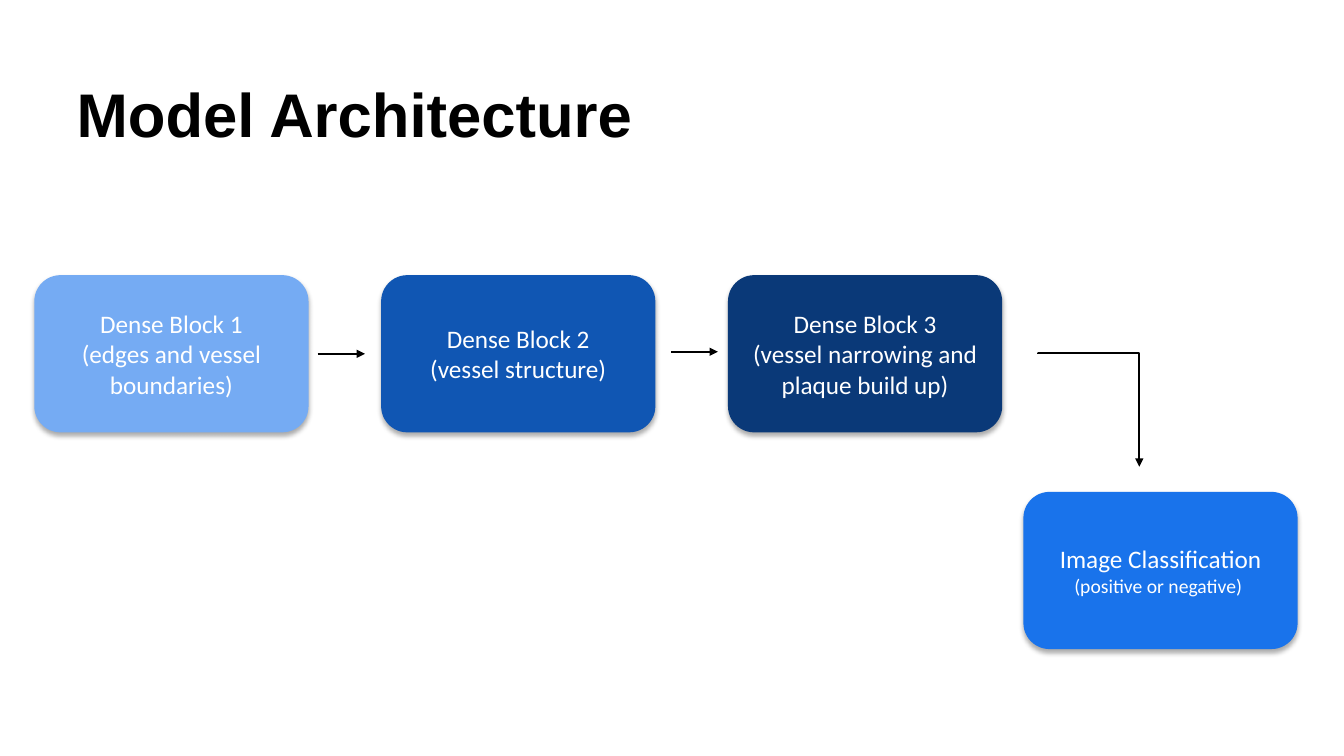
from lxml import etree
from pptx import Presentation
from pptx.dml.color import RGBColor
from pptx.enum.shapes import MSO_CONNECTOR, MSO_SHAPE
from pptx.enum.text import MSO_ANCHOR, PP_ALIGN
from pptx.oxml.ns import qn
from pptx.util import Emu, Pt

PX = 9144
ROUNDED = MSO_SHAPE.ROUNDED_RECTANGLE
STRAIGHT, ELBOW = MSO_CONNECTOR.STRAIGHT, MSO_CONNECTOR.ELBOW
TOP, MIDDLE = MSO_ANCHOR.TOP, MSO_ANCHOR.MIDDLE
LEFT, CENTER = PP_ALIGN.LEFT, PP_ALIGN.CENTER

COLORS = {
    "white": "FFFFFF",
    "black": "000000",
    "light": "75ABF3",
    "medium": "1056B3",
    "dark": "0A3978",
    "bright": "1973EB",
}
BLOCK_WIDTH, BLOCK_HEIGHT = 272, 156
BLOCK_LEFT, BLOCK_TOP, BLOCK_STEP = 34, 273, 344

DENSE_BLOCKS = [
    ("light", "Dense Block 1", "(edges and vessel boundaries)"),
    ("medium", "Dense Block 2", "(vessel structure)"),
    ("dark", "Dense Block 3", "(vessel narrowing and plaque build up)"),
]


def px(value):
    return Emu(value * PX)


def rgb(name):
    return RGBColor.from_string(COLORS[name])


class SlideBuilder:
    """Draws titles, blocks and arrows in one style on the current slide."""

    def __init__(self, slide):
        self.slide = slide

    def add_lines(self, frame, lines, font, color, align, bold=False):
        frame.word_wrap = True
        for index, (text, size) in enumerate(lines):
            paragraph = frame.add_paragraph() if index else frame.paragraphs[0]
            paragraph.alignment = align
            run = paragraph.add_run()
            run.text = text
            run.font.name = font
            run.font.size = Pt(size)
            run.font.bold = bold
            run.font.color.rgb = rgb(color)

    def title(self, text, left, top, width, height):
        shape = self.slide.shapes.add_textbox(px(left), px(top), px(width), px(height))
        frame = shape.text_frame
        frame.margin_left, frame.margin_top = px(6), px(12)
        frame.vertical_anchor = TOP
        self.add_lines(frame, [(text, 44)], "Arial", "black", LEFT, bold=True)

    def block(self, left, top, color, lines):
        shape = self.slide.shapes.add_shape(
            ROUNDED, px(left), px(top), px(BLOCK_WIDTH), px(BLOCK_HEIGHT))
        shape.fill.solid()
        shape.fill.fore_color.rgb = rgb(color)
        shape.line.fill.background()
        self.soft_shadow(shape)
        shape.text_frame.vertical_anchor = MIDDLE
        self.add_lines(shape.text_frame, lines, "Calibri", "white", CENTER)

    def soft_shadow(self, shape):
        shape.shadow.inherit = False
        effects = shape._element.spPr.find(qn("a:effectLst"))
        shadow = etree.SubElement(
            effects, qn("a:outerShdw"), blurRad=str(Pt(3.5)), dist=str(Pt(2.2)),
            dir="5400000", algn="t", rotWithShape="0")
        color = etree.SubElement(shadow, qn("a:srgbClr"), val=COLORS["black"])
        etree.SubElement(color, qn("a:alpha"), val="32000")

    def arrow(self, start, end, kind=STRAIGHT):
        connector = self.slide.shapes.add_connector(
            kind, *(px(value) for value in (*start, *end)))
        connector.line.color.rgb = rgb("black")
        connector.line.width = Pt(1.5)
        properties = connector._element.spPr
        etree.SubElement(properties.find(qn("a:ln")), qn("a:tailEnd"), type="triangle")
        etree.SubElement(properties, qn("a:effectLst"))
        return properties

    def corner_arrow(self, start, end):
        (x1, y1), (x2, y2) = start, end
        center_x, center_y = (x1 + x2) // 2, (y1 + y2) // 2
        half_width, half_height = (y2 - y1) // 2, (x2 - x1) // 2
        properties = self.arrow(
            (center_x + half_width, center_y - half_height),
            (center_x - half_width, center_y + half_height), ELBOW)
        properties.find(qn("a:xfrm")).set("rot", "16200000")
        adjustments = properties.find(qn("a:prstGeom")).find(qn("a:avLst"))
        etree.SubElement(adjustments, qn("a:gd"), name="adj1", fmla="val -1000")


def main():
    presentation = Presentation()
    presentation.slide_width, presentation.slide_height = px(1333), px(750)
    builder = SlideBuilder(presentation.slides.add_slide(presentation.slide_layouts[6]))

    builder.title("Model Architecture", 70, 63, 1191, 120)
    for index, (color, name, detail) in enumerate(DENSE_BLOCKS):
        builder.block(BLOCK_LEFT + index * BLOCK_STEP, BLOCK_TOP, color,
                      [(name, 18), (detail, 18)])
    builder.block(1015, 488, "bright",
                  [("Image Classification", 18), ("(positive or negative) ", 14)])

    builder.arrow((315, 351), (362, 351))
    builder.arrow((666, 349), (712, 349))
    builder.corner_arrow((1030, 351), (1131, 463))

    presentation.save("out.pptx")


if __name__ == "__main__":
    main()
